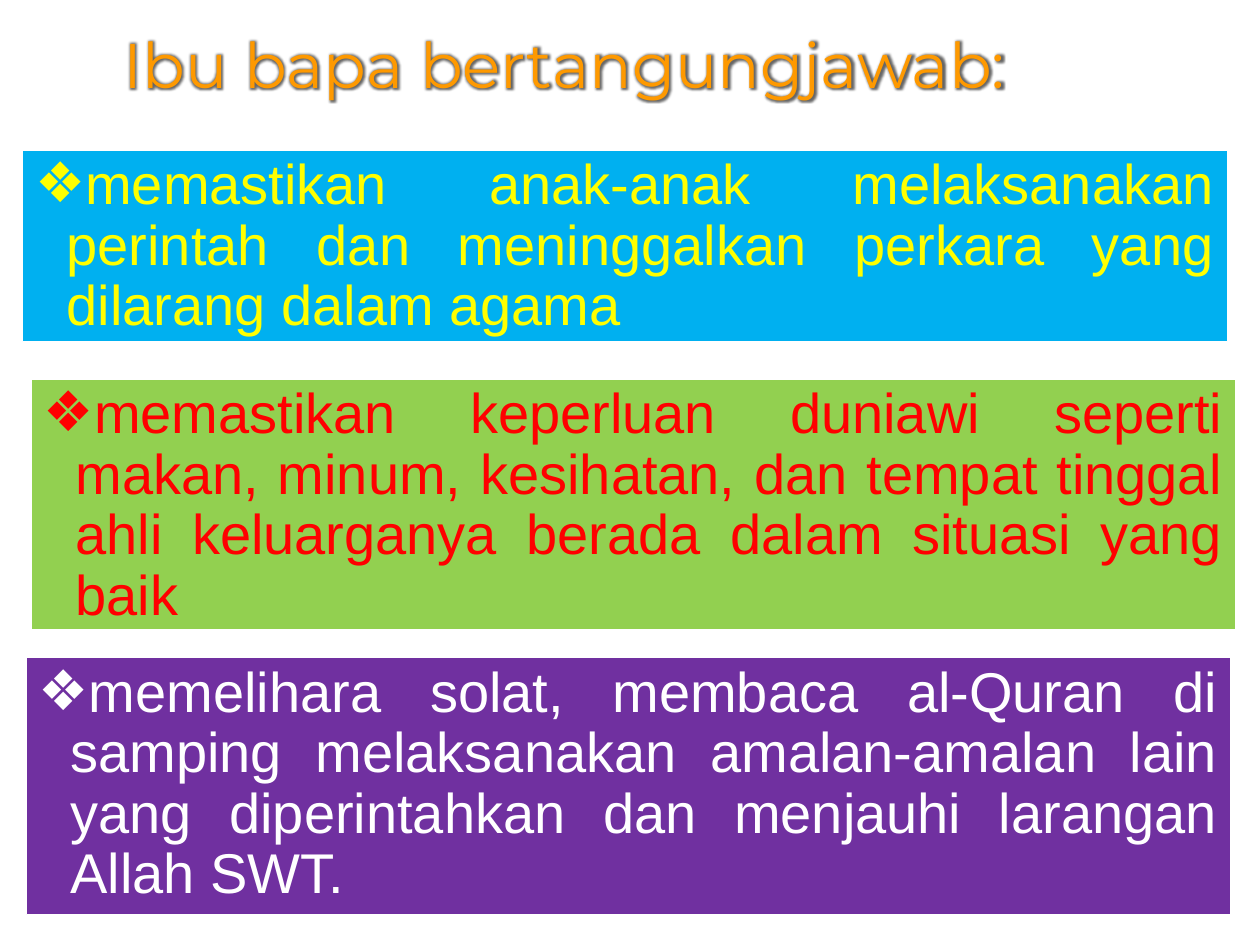
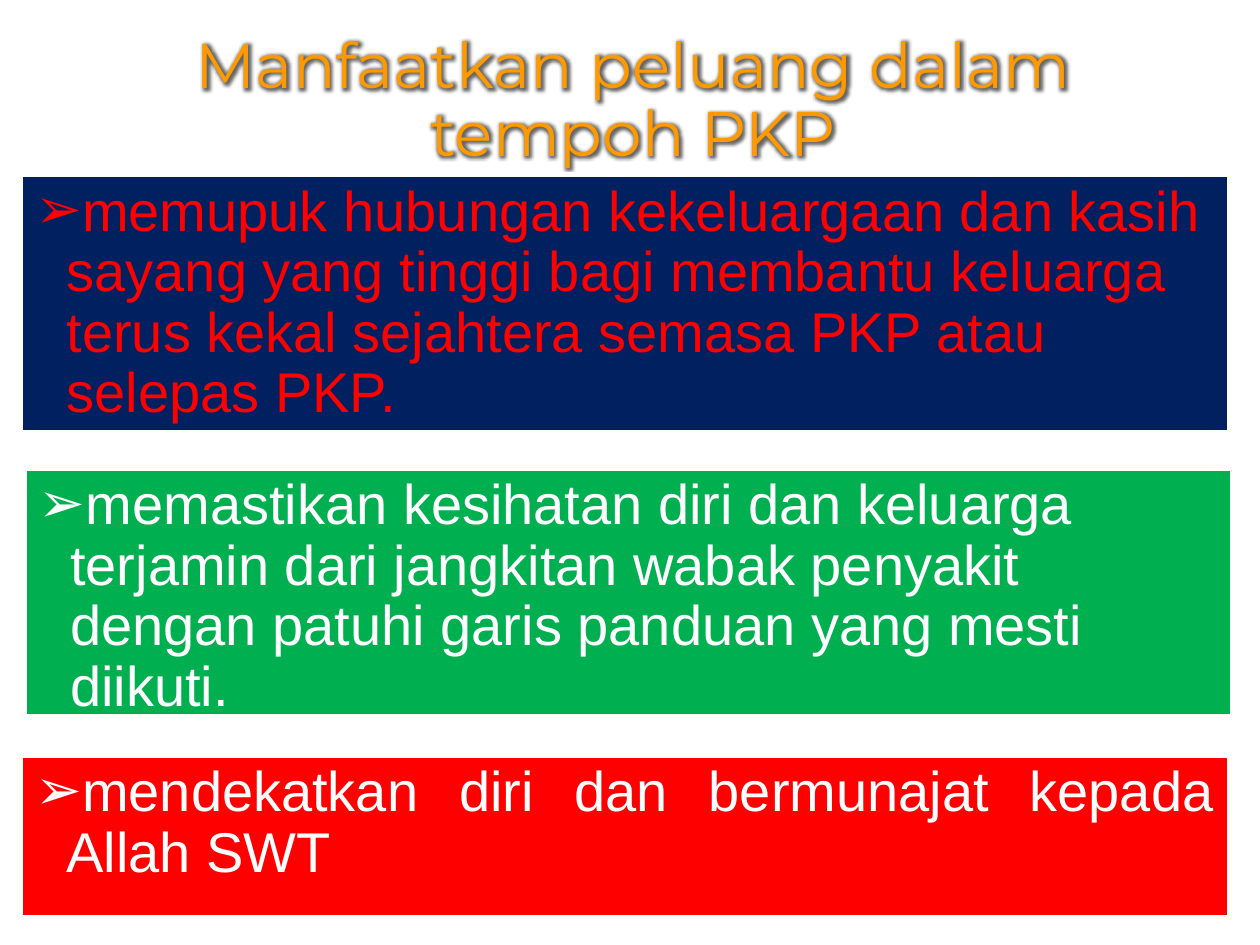
from lxml.etree import SubElement
from pptx import Presentation
from pptx.dml.color import RGBColor
from pptx.enum.shapes import MSO_SHAPE as Shape
from pptx.enum.text import MSO_ANCHOR as Anchor, MSO_AUTO_SIZE as AutoSize, PP_ALIGN as Align
from pptx.oxml import parse_xml
from pptx.oxml.ns import nsdecls, qn
from pptx.util import Pt

WHITE = RGBColor(0xFF, 0xFF, 0xFF)
ORANGE = RGBColor(0xFE, 0x99, 0x00)
YELLOW = RGBColor(0xFF, 0xFF, 0x00)
RED = RGBColor(0xFF, 0x00, 0x00)
SKY = RGBColor(0x00, 0xB0, 0xF0)
LIME = RGBColor(0x92, 0xD0, 0x50)
PURPLE = RGBColor(0x70, 0x30, 0xA0)
NAVY = RGBColor(0x00, 0x20, 0x60)
GREEN = RGBColor(0x00, 0xB0, 0x50)

TITLE_FONT, BODY_FONT = "Montserrat", "Arial"
TITLE_BOX = (63.4, 15.8, 596.9, 90)
BAND_WIDTH = 688.3
LINE_SPACING = 0.9
INDENT = Pt(18)

# Thin dark outline and soft halo of the title letters
OUTLINE = (f'<a:ln {nsdecls("a")} w="9525"><a:solidFill>'
           '<a:srgbClr val="000000"/></a:solidFill></a:ln>')
HALO = (f'<a:effectLst {nsdecls("a")}><a:glow rad="50800">'
        '<a:srgbClr val="000000"><a:alpha val="60000"/></a:srgbClr>'
        '</a:glow></a:effectLst>')

# Each band: left, top, height, fill, text colour, alignment, wording
DUTIES = [
    (13, 85.9, 109.4, SKY, YELLOW, Align.JUSTIFY,
     "memastikan anak-anak melaksanakan perintah dan meninggalkan perkara "
     "yang dilarang dalam agama"),
    (18, 216.7, 143.3, LIME, RED, Align.JUSTIFY,
     "memastikan keperluan duniawi seperti makan, minum, kesihatan, dan "
     "tempat tinggal ahli keluarganya berada dalam situasi yang baik"),
    (15.1, 375.8, 146.9, PURPLE, WHITE, Align.JUSTIFY,
     "memelihara solat, membaca al-Quran di samping melaksanakan "
     "amalan-amalan lain yang diperintahkan dan menjauhi larangan Allah SWT."),
]
BENEFITS = [
    (13, 100.8, 145.4, NAVY, RED, Align.LEFT,
     "memupuk hubungan kekeluargaan dan kasih sayang yang tinggi bagi "
     "membantu keluarga terus kekal sejahtera semasa PKP atau selepas PKP."),
    (15.1, 268.6, 139.7, GREEN, WHITE, Align.LEFT,
     "memastikan kesihatan diri dan keluarga terjamin dari jangkitan wabak "
     "penyakit dengan patuhi garis panduan yang mesti diikuti."),
    (13, 432.7, 90.7, RED, WHITE, Align.JUSTIFY,
     "mendekatkan diri dan bermunajat kepada Allah SWT"),
]


def write(frame, wording, font_name, size, color, align):
    """Put one formatted run in the first paragraph of a top-anchored frame."""
    frame.word_wrap = True
    frame.auto_size = AutoSize.NONE
    frame.vertical_anchor = Anchor.TOP
    paragraph = frame.paragraphs[0]
    paragraph.alignment = align
    paragraph.line_spacing = LINE_SPACING
    run = paragraph.add_run()
    run.text = wording
    run.font.name = font_name
    run.font.size = Pt(size)
    run.font.color.rgb = color
    return paragraph, run


def add_title(slide, box, wording, align):
    title = slide.shapes.title
    title.left, title.top, title.width, title.height = map(Pt, box)
    _, run = write(title.text_frame, wording, TITLE_FONT, 36, ORANGE, align)
    letters = run.font._element
    letters.insert(0, parse_xml(OUTLINE))
    letters.find(qn("a:solidFill")).addnext(parse_xml(HALO))


def add_band(slide, box, fill, color, align, bullet, wording):
    band = slide.shapes.add_shape(Shape.RECTANGLE, *map(Pt, box))
    band.shadow.inherit = False
    band.fill.solid()
    band.fill.fore_color.rgb = fill
    band.line.color.rgb = WHITE
    band.line.width = Pt(0.75)
    paragraph, _ = write(band.text_frame, wording, BODY_FONT, 32, color, align)
    # Hanging bullet
    props = paragraph._p.get_or_add_pPr()
    props.set("marL", str(INDENT))
    props.set("indent", str(-INDENT))
    SubElement(props, qn("a:buFont"), typeface=BODY_FONT)
    SubElement(props, qn("a:buChar"), char=bullet)


def add_list_slide(deck, heading, heading_align, bullet, bands):
    slide = deck.slides.add_slide(deck.slide_layouts.get_by_name("Title Only"))
    add_title(slide, TITLE_BOX, heading, heading_align)
    for left, top, height, fill, color, align, wording in bands:
        add_band(slide, (left, top, BAND_WIDTH, height),
                 fill, color, align, bullet, wording)


def main():
    deck = Presentation()
    deck.slide_width, deck.slide_height = Pt(720), Pt(540)
    add_list_slide(deck, "Ibu bapa bertangungjawab:", Align.LEFT, "❖", DUTIES)
    add_list_slide(deck, "Manfaatkan peluang dalam tempoh PKP", Align.CENTER,
                   "➢", BENEFITS)
    deck.save("out.pptx")


if __name__ == "__main__":
    main()
